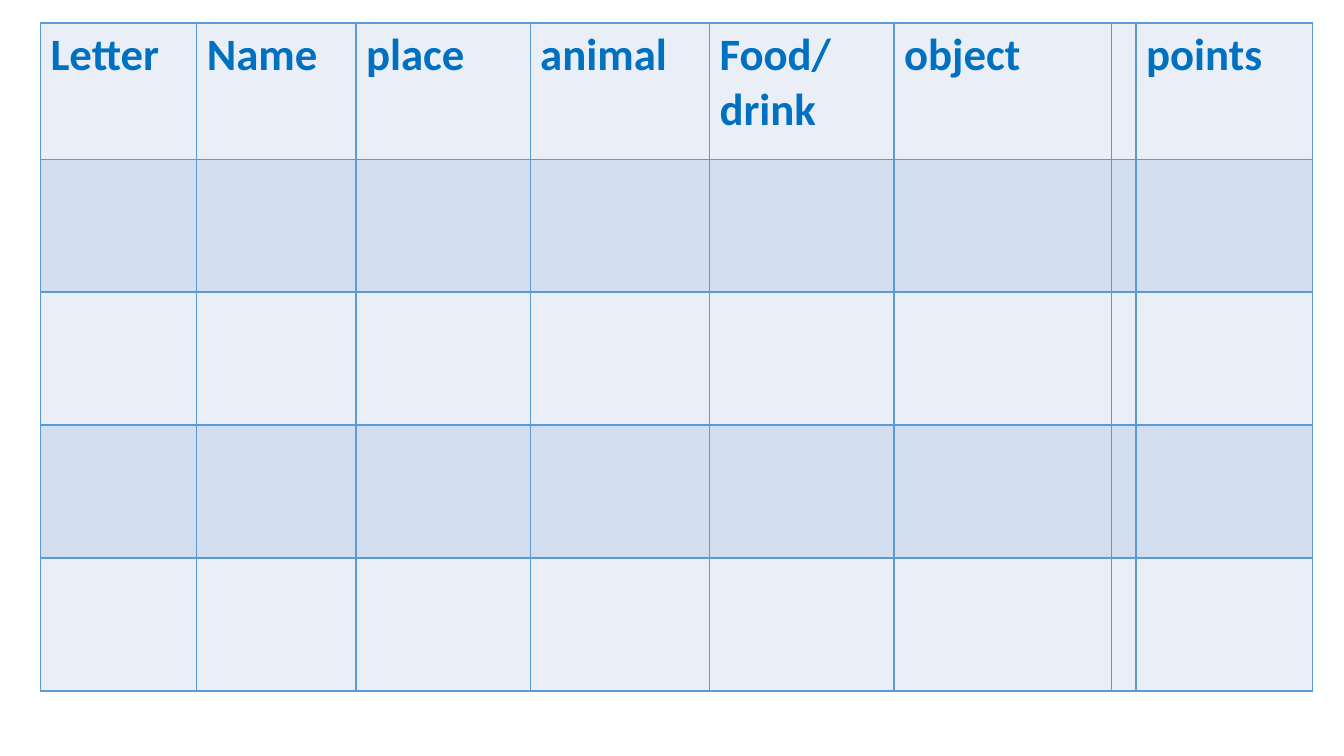
"""Build a word-game score sheet with one column per category."""
from dataclasses import dataclass

from lxml import etree
from pptx import Presentation
from pptx.dml.color import RGBColor
from pptx.oxml import ns
from pptx.slide import Slide
from pptx.table import _Cell
from pptx.util import Cm, Pt

HEADING_BLUE = RGBColor(0x00, 0x70, 0xC0)
BORDER_BLUE = RGBColor(0x5B, 0x9B, 0xD5)
LIGHT_BAND = RGBColor(0xEA, 0xEF, 0xF7)
DARK_BAND = RGBColor(0xD2, 0xDE, 0xEF)


@dataclass(frozen=True)
class Column:
    heading: str
    width: Cm


COLUMNS = [
    Column("Letter", Cm(3.94)),
    Column("Name", Cm(4.01)),
    Column("place", Cm(4.39)),
    Column("animal", Cm(4.52)),
    Column("Food/ drink", Cm(4.65)),
    Column("object", Cm(5.49)),
    Column("", Cm(0.6)),
    Column("points", Cm(4.45)),
]
ROW_HEIGHTS = [Cm(3.43)] + [Cm(3.35)] * 4


def add_borders(cell: _Cell) -> None:
    properties = cell._tc.get_or_add_tcPr()
    for side in ("lnL", "lnR", "lnT", "lnB"):
        line = etree.SubElement(properties, ns.qn(f"a:{side}"), w=str(Pt(1)))
        fill = etree.SubElement(line, ns.qn("a:solidFill"))
        etree.SubElement(fill, ns.qn("a:srgbClr"), val=str(BORDER_BLUE))


def style_cell(cell: _Cell, band: RGBColor) -> None:
    add_borders(cell)
    cell.fill.solid()
    cell.fill.fore_color.rgb = band


def write_heading(cell: _Cell, heading: str) -> None:
    cell.text = heading
    font = cell.text_frame.paragraphs[0].font
    font.name = "Calibri"
    font.size = Pt(32)
    font.bold = True
    font.color.rgb = HEADING_BLUE


def add_score_table(slide: Slide) -> None:
    width = sum(column.width for column in COLUMNS)
    table = slide.shapes.add_table(
        len(ROW_HEIGHTS), len(COLUMNS), Cm(1.02), Cm(0.58), width, sum(ROW_HEIGHTS)
    ).table
    for table_column, column in zip(table.columns, COLUMNS):
        table_column.width = column.width
    for index, (row, height) in enumerate(zip(table.rows, ROW_HEIGHTS)):
        row.height = height
        for cell in row.cells:
            style_cell(cell, DARK_BAND if index % 2 else LIGHT_BAND)
    for cell, column in zip(table.rows[0].cells, COLUMNS):
        if column.heading:
            write_heading(cell, column.heading)


def main() -> None:
    presentation = Presentation()
    presentation.slide_width = Cm(33.87)
    presentation.slide_height = Cm(19.05)
    slide = presentation.slides.add_slide(presentation.slide_layouts[6])
    add_score_table(slide)
    presentation.save("out.pptx")


if __name__ == "__main__":
    main()
